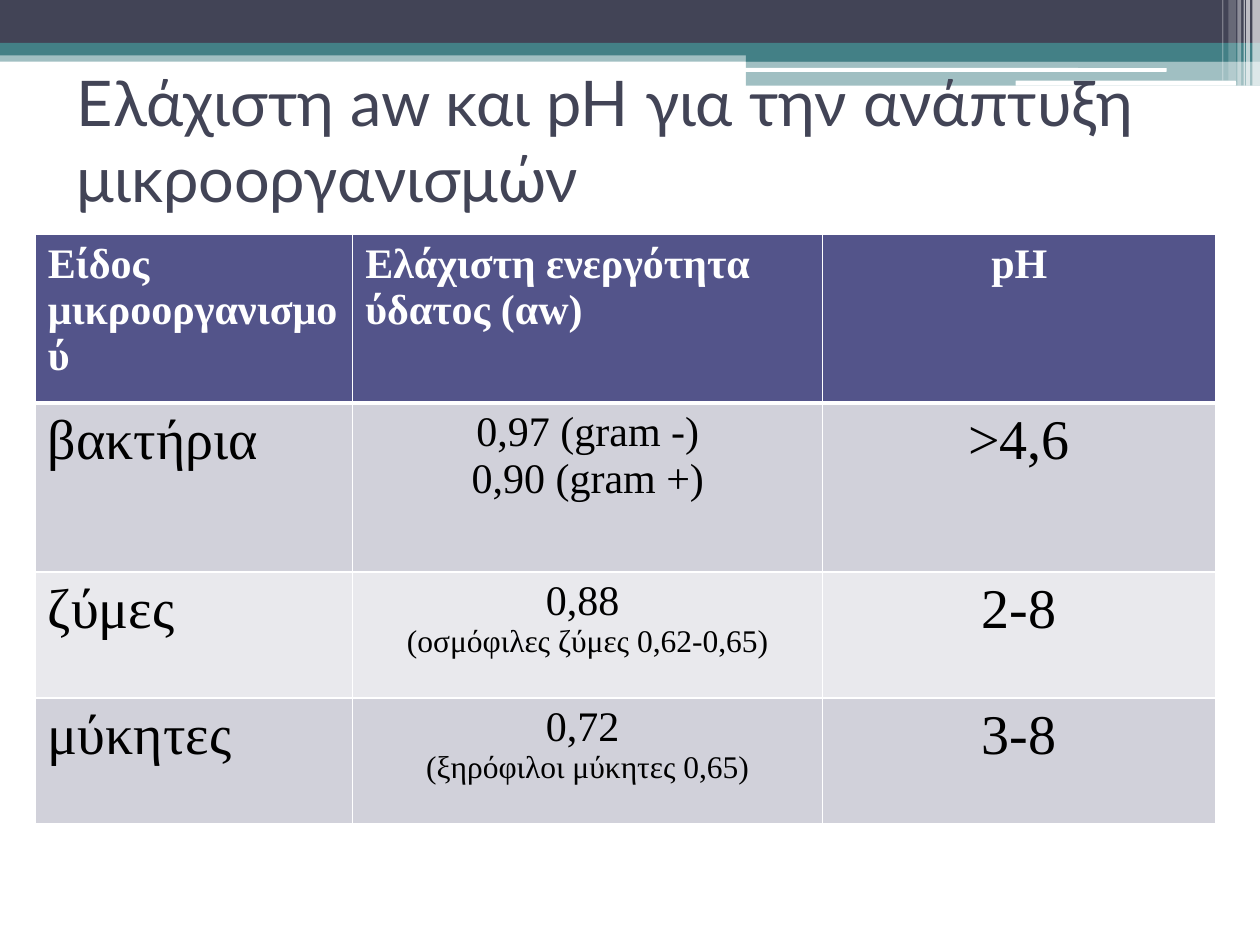
from dataclasses import dataclass

import lxml.etree
import pptx
import pptx.dml.color
import pptx.enum.shapes
import pptx.enum.text
import pptx.oxml.ns
import pptx.util

COLS, ROWS = 100, 75
UNIT = pptx.util.Inches(0.1)
SHAPE = pptx.enum.shapes.MSO_SHAPE
ALIGN = pptx.enum.text.PP_ALIGN
qn = pptx.oxml.ns.qn


@dataclass(frozen=True)
class Theme:
    dark: str = "424456"
    teal: str = "438086"
    white: str = "FFFFFF"
    black: str = "000000"
    head: str = "53548A"
    bands: tuple = ("D1D1DA", "E9E9ED")
    title_font: str = "Lato"
    table_font: str = "Times New Roman"
    title: int = 36
    large: int = 32
    medium: int = 24
    small: int = 18
    rule: int = 1
    head_rule: int = 3


@dataclass(frozen=True)
class Box:
    """A region measured in grid columns and rows."""
    x: float
    y: float
    w: float
    h: float

    def inner(self, x, y, w, h):
        return Box(self.x + x, self.y + y, w, h)

    def emu(self):
        return [round(v * UNIT) for v in (self.x, self.y, self.w, self.h)]


T = Theme()


def rgb(color):
    return pptx.dml.color.RGBColor.from_string(color)


def write(p, text, font=T.table_font, size=T.medium, color=T.black,
          bold=False, align=ALIGN.LEFT):
    p.alignment = align
    r = p.add_run()
    r.text = text
    r.font.name, r.font.size = font, pptx.util.Pt(size)
    r.font.bold = bold
    r.font.color.rgb = rgb(color)


def add_bar(s, box, color, alpha=100, kind=SHAPE.RECTANGLE):
    sp = s.shapes.add_shape(kind, *box.emu())
    sp.shadow.inherit = False
    sp.line.fill.background()
    sp.fill.solid()
    sp.fill.fore_color.rgb = rgb(color)
    if alpha < 100:
        clr = sp._element.spPr.find(qn("a:solidFill"))[0]
        lxml.etree.SubElement(clr, qn("a:alpha")).set("val", str(alpha * 1000))


def add_header(s, box):
    split = 59.2
    right = box.w - split
    add_bar(s, box.inner(0, 4, box.w, 0.9), T.teal, 50)
    add_bar(s, box.inner(0, 0, box.w, 3.4), T.dark)
    add_bar(s, box.inner(0, 3.4, box.w, 1), T.teal)
    add_bar(s, box.inner(split, 3.9, right, 1), T.teal)
    add_bar(s, box.inner(split, 4.8, right, 2), T.teal, 50)
    for x, y, w, h in ((59.1, 5.4, 33.5, 0.3), (80.6, 6.4, 17.5, 0.4)):
        add_bar(s, box.inner(x, y, w, h), T.white, kind=SHAPE.ROUNDED_RECTANGLE)

    stripes = ((99.4, 0.6, 6.8, 65), (98.9, 0.3, 6.8, 65), (98.7, 0.1, 6.8, 60),
               (98.2, 0.3, 6.8, 40), (97.5, 0.6, 6.4, 20), (97, 0.1, 6.4, 30))
    for x, w, h, alpha in stripes:
        add_bar(s, box.inner(x, 0, w, h), T.white, alpha)


def add_title(s, box, text):
    sp = s.shapes.title
    sp.left, sp.top, sp.width, sp.height = box.emu()
    tf = sp.text_frame
    tf.word_wrap = True
    tf.auto_size = pptx.enum.text.MSO_AUTO_SIZE.NONE
    tf.vertical_anchor = pptx.enum.text.MSO_ANCHOR.MIDDLE
    write(tf.paragraphs[0], text, font=T.title_font, size=T.title, color=T.dark)
    s.shapes._spTree.append(sp._element)  # in front of the header bars


def set_borders(cell, **widths):
    tcPr = cell._tc.get_or_add_tcPr()
    for i, side in enumerate("LRTB"):
        ln = lxml.etree.Element(qn(f"a:ln{side}"))
        ln.set("w", str(pptx.util.Pt(widths.get(side, T.rule))))
        fill = lxml.etree.SubElement(ln, qn("a:solidFill"))
        lxml.etree.SubElement(fill, qn("a:srgbClr")).set("val", T.white)
        tcPr.insert(i, ln)


def fill_cell(cell, lines, fill, **fmt):
    """Write (text, size) lines into a cell, one paragraph each."""
    cell.fill.solid()
    cell.fill.fore_color.rgb = rgb(fill)
    tf = cell.text_frame
    for i, (text, size) in enumerate(lines):
        p = tf.add_paragraph() if i else tf.paragraphs[0]
        write(p, text, size=size, **fmt)


def add_table(s, box, heads, rows, col_widths, row_heights):
    frame = s.shapes.add_table(len(rows) + 1, len(heads), *box.emu())
    table = frame.table
    for col, w in zip(table.columns, col_widths):
        col.width = round(w * UNIT)
    for row, h in zip(table.rows, row_heights):
        row.height = round(h * UNIT)

    head_aligns = (ALIGN.LEFT, ALIGN.LEFT, ALIGN.CENTER)
    for c, (text, align) in enumerate(zip(heads, head_aligns)):
        cell = table.cell(0, c)
        fill_cell(cell, [(text, T.medium)], T.head, color=T.white, bold=True, align=align)
        set_borders(cell, B=T.head_rule)

    body_aligns = (ALIGN.LEFT, ALIGN.CENTER, ALIGN.CENTER)
    for r, (kind, activity, ph) in enumerate(rows, 1):
        contents = ([(kind, T.large)], activity, [(ph, T.large)])
        for c, (lines, align) in enumerate(zip(contents, body_aligns)):
            cell = table.cell(r, c)
            fill_cell(cell, lines, T.bands[(r - 1) % 2], align=align)
            set_borders(cell, T=T.head_rule if r == 1 else T.rule)


def main():
    prs = pptx.Presentation()
    prs.slide_width, prs.slide_height = COLS * UNIT, ROWS * UNIT
    s = prs.slides.add_slide(prs.slide_layouts[5])
    page = Box(0, 0, COLS, ROWS)

    add_header(s, page.inner(0, 0, COLS, 6.8))
    add_title(s, page.inner(5.1, 5.2, 90, 11.7),
              "Ελάχιστη aw και pH για την ανάπτυξη μικροοργανισμών")
    heads = ("Είδος μικροοργανισμού", "Ελάχιστη ενεργότητα ύδατος (αw)", "pH")
    rows = (
        ("βακτήρια", [("0,97 (gram -)", T.medium), ("0,90 (gram +)", T.medium)], ">4,6"),
        ("ζύμες", [("0,88 ", T.medium), ("(οσμόφιλες ζύμες 0,62-0,65)", T.small)], "2-8"),
        ("μύκητες", [("0,72 ", T.medium), ("(ξηρόφιλοι μύκητες 0,65)", T.small)], "3-8"),
    )
    add_table(s, page.inner(2.8, 18.6, 93.7, 46.8), heads, rows,
              col_widths=(25.2, 37.3, 31.2), row_heights=(13.4, 13.4, 10, 10))
    prs.save("out.pptx")


if __name__ == "__main__":
    main()
